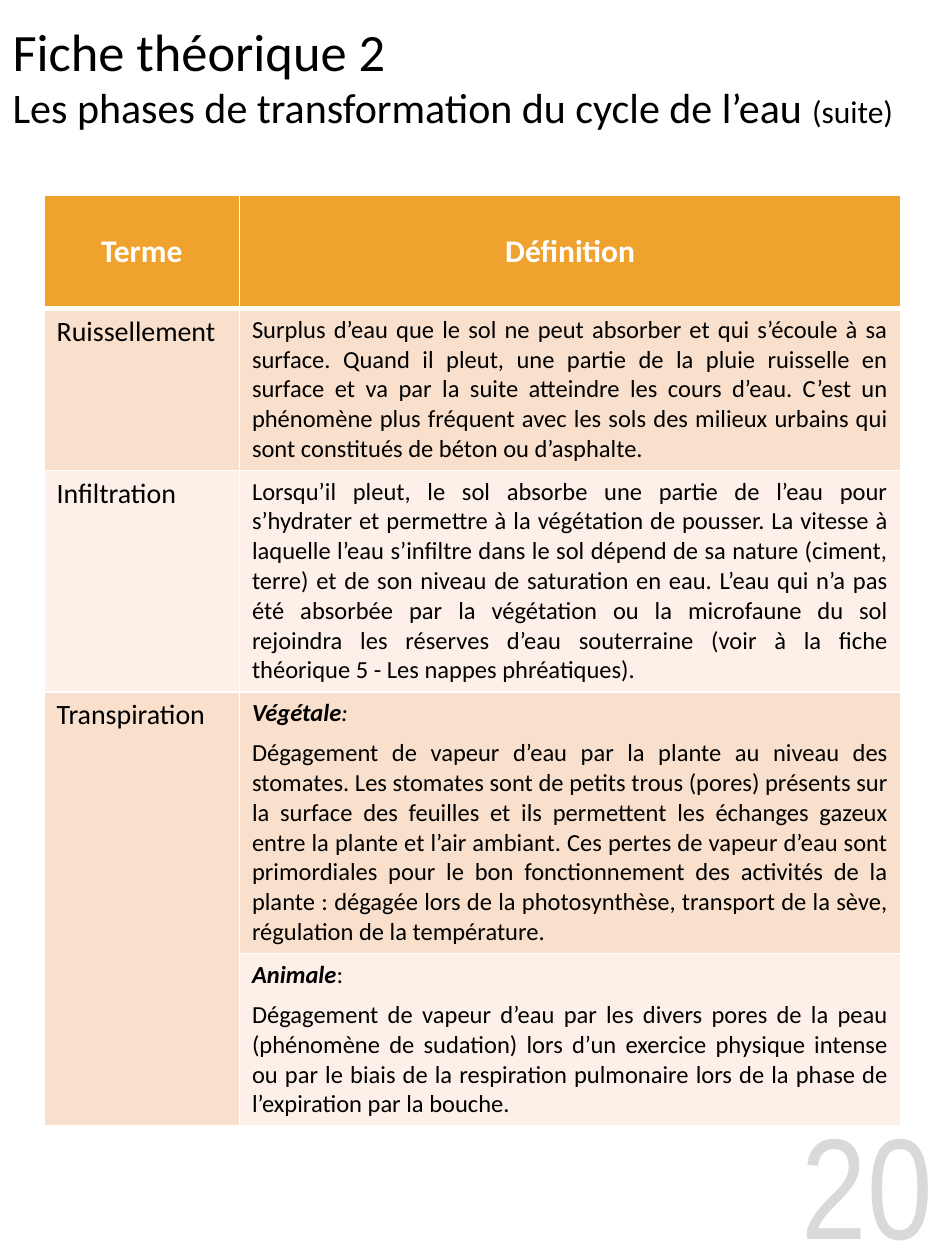
from pptx import Presentation
from pptx.dml.color import RGBColor
from pptx.enum.text import MSO_ANCHOR as Anchor, MSO_AUTO_SIZE as Fit, PP_ALIGN as Align
from pptx.oxml import parse_xml
from pptx.oxml.ns import nsdecls
from pptx.util import Inches, Pt

ORANGE, PEACH, CREAM = "F0A22E", "F9E0CD", "FCF0E8"
WHITE, BLACK, GREY = "FFFFFF", "000000", "D9D9D9"

# Term, definition paragraphs (label first where there is one), row height
ROWS = [
    ("Ruissellement", [
        "Surplus d’eau que le sol ne peut absorber et qui s’écoule à sa surface. "
        "Quand il pleut, une partie de la pluie ruisselle en surface et va par la "
        "suite atteindre les cours d’eau. C’est un phénomène plus fréquent avec les "
        "sols des milieux urbains qui sont constitués de béton ou d’asphalte."], 1.22),
    ("Infiltration", [
        "Lorsqu’il pleut, le sol absorbe une partie de l’eau pour s’hydrater et "
        "permettre à la végétation de pousser. La vitesse à laquelle l’eau "
        "s’infiltre dans le sol dépend de sa nature (ciment, terre) et de son niveau "
        "de saturation en eau. L’eau qui n’a pas été absorbée par la végétation ou la "
        "microfaune du sol rejoindra les réserves d’eau souterraine (voir à la fiche "
        "théorique 5 - Les nappes phréatiques)."], 1.57),
    ("Transpiration", [
        ("Végétale", True),
        "Dégagement de vapeur d’eau par la plante au niveau des stomates. Les "
        "stomates sont de petits trous (pores) présents sur la surface des feuilles "
        "et ils permettent les échanges gazeux entre la plante et l’air ambiant. Ces "
        "pertes de vapeur d’eau sont primordiales pour le bon fonctionnement des "
        "activités de la plante : dégagée lors de la photosynthèse, transport de la "
        "sève, régulation de la température."], 1.94),
    (None, [
        ("Animale", False),
        "Dégagement de vapeur d’eau par les divers pores de la peau (phénomène de "
        "sudation) lors d’un exercice physique intense ou par le biais de la "
        "respiration pulmonaire lors de la phase de l’expiration par la bouche."], 1.35),
]


def rgb(code):
    return RGBColor.from_string(code)


def style(par, size, color=BLACK, align=Align.LEFT, face="Calibri", bold=False):
    par.alignment = align
    font = par.font
    font.name, font.size, font.bold = face, Pt(size), bold
    font.color.rgb = rgb(color)


def paint(cell, color, base=1):
    """White borders, then the fill; base is the bottom or top width of the rule."""
    props = cell._tc.get_or_add_tcPr()
    for side, width in (("L", 1), ("R", 1), ("T", 1), ("B", base)):
        props.append(parse_xml(
            f'<a:ln{side} {nsdecls("a")} w="{Pt(width)}"><a:solidFill>'
            f'<a:srgbClr val="{WHITE}"/></a:solidFill></a:ln{side}>'))
    cell.fill.solid()
    cell.fill.fore_color.rgb = rgb(color)


def define(cell, parts):
    frame = cell.text_frame
    for i, part in enumerate(parts):
        par = frame.add_paragraph() if i else frame.paragraphs[0]
        style(par, 14, align=Align.JUSTIFY)
        if i:
            par.space_before = Pt(6)
        if isinstance(part, str):
            par.add_run().text = part
            continue
        # Bold italic label and its colon
        label, slant = part
        run = par.add_run()
        run.text = label
        run.font.bold = run.font.italic = True
        colon = par.add_run()
        colon.text = ":"
        colon.font.italic = slant


def add_title(slide, left, top, width, height):
    title = slide.shapes.title
    title.left, title.top, title.width, title.height = left, top, width, height
    frame = title.text_frame
    frame.auto_size = Fit.NONE
    frame.word_wrap = True
    frame.vertical_anchor = Anchor.MIDDLE
    head = frame.paragraphs[0]
    head.text = "Fiche théorique 2"
    style(head, 30)
    sub = frame.add_paragraph()
    style(sub, 24)
    sub.add_run().text = "Les phases de transformation du cycle de l’eau "
    note = sub.add_run()
    note.text = "(suite)"
    note.font.size = Pt(18)


def add_terms(slide, left, top, width, height):
    table = slide.shapes.add_table(len(ROWS) + 1, 2, left, top, width, height).table
    table.columns[0].width = Inches(1.55)
    table.columns[1].width = width - Inches(1.55)

    # Header row
    table.rows[0].height = Inches(0.9)
    for cell, text in zip(table.rows[0].cells, ("Terme", "Définition")):
        cell.text = text
        cell.vertical_anchor = Anchor.MIDDLE
        style(cell.text_frame.paragraphs[0], 18, WHITE, Align.CENTER, bold=True)
        paint(cell, ORANGE, base=3)

    # Banded rows; a row without a term joins the one above
    for i, (term, parts, tall) in enumerate(ROWS, 1):
        table.rows[i].height = Inches(tall)
        name, text = table.rows[i].cells
        band = PEACH if i % 2 else CREAM
        paint(text, band)
        define(text, parts)
        paint(name, band if term else PEACH)
        if term:
            name.text = term
            style(name.text_frame.paragraphs[0], 16)
        else:
            table.cell(i - 1, 0).merge(name)


def add_number(slide, left, top, width, height):
    frame = slide.shapes.add_textbox(left, top, width, height).text_frame
    frame.word_wrap = True
    frame.vertical_anchor = Anchor.MIDDLE
    par = frame.paragraphs[0]
    par.text = "20"
    style(par, 82, GREY, Align.RIGHT, "Arial Narrow")


def main():
    deck = Presentation()
    deck.slide_width, deck.slide_height = Inches(7.5), Inches(10)
    slide = deck.slides.add_slide(deck.slide_layouts[5])
    add_title(slide, 0, 0, deck.slide_width, Inches(1.2))
    add_terms(slide, Inches(0.35), Inches(1.55), Inches(6.8), Inches(6.98))
    add_number(slide, Inches(5.79), Inches(8.76), Inches(1.71), Inches(1.24))
    deck.save("out.pptx")


if __name__ == "__main__":
    main()
